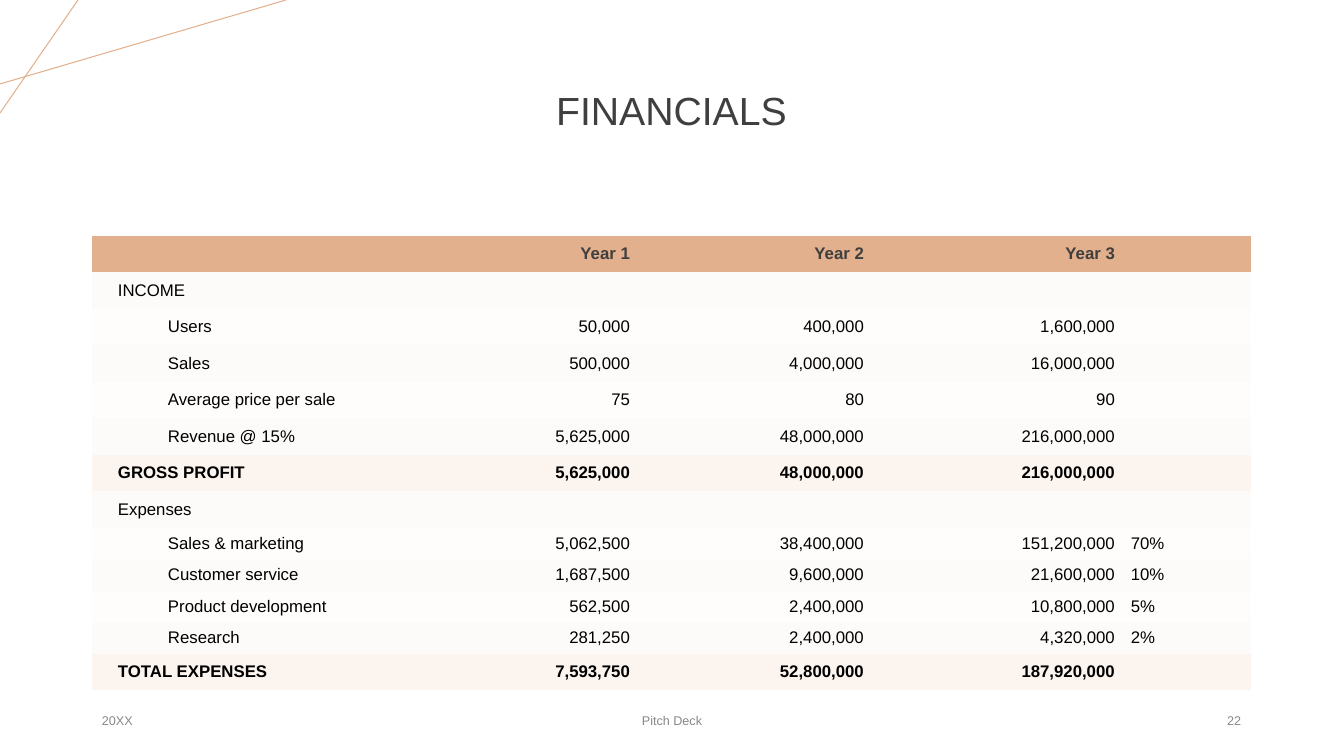
from lxml import etree
from pptx import Presentation
from pptx import util as u
from pptx.dml.color import RGBColor
from pptx.enum import shapes, text
from pptx.oxml import ns

PX = 914400 / 100.8
FONT = "Arial"
COPPER = RGBColor(0xE2, 0xB0, 0x8C)
CHARCOAL = RGBColor(0x3F, 0x3F, 0x3F)
GREY = RGBColor(0x88, 0x88, 0x88)
BLACK = RGBColor(0, 0, 0)
BAND_DARK = RGBColor(0xFD, 0xFB, 0xF9)
BAND_LIGHT = RGBColor(0xFE, 0xFD, 0xFC)
TOTAL_FILL = RGBColor(0xFB, 0xF4, 0xEF)
NO_GRID_STYLE = "{2D5ABB26-0587-4C30-8999-92F81FD0307C}"
LEFT, CENTER, RIGHT = text.PP_ALIGN.LEFT, text.PP_ALIGN.CENTER, text.PP_ALIGN.RIGHT

COLUMN_WIDTHS = [357, 189, 234, 251, 128]
# Row kind, then the cells
ROWS = [
    ("header", ["", "Year 1", "Year 2", "Year 3", ""]),
    ("section", ["INCOME", "", "", "", ""]),
    ("item", ["Users", "50,000", "400,000", "1,600,000", ""]),
    ("item", ["Sales", "500,000", "4,000,000", "16,000,000", ""]),
    ("item", ["Average price per sale", "75", "80", "90", ""]),
    ("item", ["Revenue @ 15%", "5,625,000", "48,000,000", "216,000,000", ""]),
    ("total", ["GROSS PROFIT", "5,625,000", "48,000,000", "216,000,000", ""]),
    ("section", ["Expenses", "", "", "", ""]),
    ("item", ["Sales & marketing", "5,062,500", "38,400,000", "151,200,000", "70%"]),
    ("item", ["Customer service", "1,687,500", "9,600,000", "21,600,000", "10%"]),
    ("item", ["Product development", "562,500", "2,400,000", "10,800,000", "5%"]),
    ("item", ["Research", "281,250", "2,400,000", "4,320,000", "2%"]),
    ("total", ["TOTAL EXPENSES", "7,593,750", "52,800,000", "187,920,000", ""]),
]


def px(length):
    return u.Emu(round(length * PX))


def write(paragraph, words, size=12, color=BLACK, bold=False, align=LEFT,
          indent=0, spacing=None):
    paragraph.alignment = align
    if spacing:
        paragraph.line_spacing = spacing
    if indent:
        paragraph.level = 1
        properties = paragraph._p.get_or_add_pPr()
        properties.set("marL", str(px(indent)))
        properties.set("indent", "0")
    if not words:
        # An empty cell keeps the text size, so that its row does not grow
        end = etree.SubElement(paragraph._p, ns.qn("a:endParaRPr"))
        end.set("sz", str(size * 100))
        return
    run = paragraph.add_run()
    run.text = words
    run.font.name = FONT
    run.font.size = u.Pt(size)
    run.font.bold = bold
    run.font.color.rgb = color


class FinancialSlide:
    def __init__(self, presentation):
        self.slide = presentation.slides.add_slide(presentation.slide_layouts[5])

    def line(self, x1, y1, x2, y2):
        connector = self.slide.shapes.add_connector(
            shapes.MSO_CONNECTOR.STRAIGHT, px(x1), px(y1), px(x2), px(y2))
        connector.line.color.rgb = COPPER
        connector.line.width = u.Pt(0.75)
        etree.SubElement(connector._element.spPr, ns.qn("a:effectLst"))

    def title(self, words, x, y, width, height):
        title = self.slide.shapes.title
        title.left, title.top = px(x), px(y)
        title.width, title.height = px(width), px(height)
        title.text_frame.vertical_anchor = text.MSO_ANCHOR.MIDDLE
        write(title.text_frame.paragraphs[0], words, size=28, color=CHARCOAL,
              align=CENTER, spacing=0.9)

    def footer(self, words, x, width, align):
        box = self.slide.shapes.add_textbox(px(x), px(701), px(width), px(40))
        box.text_frame.word_wrap = True
        box.text_frame.vertical_anchor = text.MSO_ANCHOR.MIDDLE
        write(box.text_frame.paragraphs[0], words, size=9, color=GREY, align=align)

    def table(self, x, y):
        # Rows with every cell filled are lower; odd rows take one px more
        heights = [(31 if all(cells) else 36) + index % 2
                   for index, (kind, cells) in enumerate(ROWS)]
        frame = self.slide.shapes.add_table(
            len(ROWS), len(COLUMN_WIDTHS), px(x), px(y),
            px(sum(COLUMN_WIDTHS)), px(sum(heights)))
        table = frame.table
        table.horz_banding = False
        table._tbl.tblPr.find(ns.qn("a:tableStyleId")).text = NO_GRID_STYLE
        for column, width in zip(table.columns, COLUMN_WIDTHS):
            column.width = px(width)
        for index, (kind, cells) in enumerate(ROWS):
            table.rows[index].height = px(heights[index])
            band = BAND_DARK if index % 2 else BAND_LIGHT
            fill = {"header": COPPER, "total": TOTAL_FILL}.get(kind, band)
            for column, words in enumerate(cells):
                self.cell(table.cell(index, column), words, kind, column, fill)

    def cell(self, cell, words, kind, column, fill):
        cell.fill.solid()
        cell.fill.fore_color.rgb = fill
        cell.vertical_anchor = text.MSO_ANCHOR.MIDDLE
        cell.margin_left = px(8 if column else 26)
        cell.margin_right = px(8)
        cell.margin_top = cell.margin_bottom = px(4)
        write(cell.text_frame.paragraphs[0], words,
              color=CHARCOAL if kind == "header" else BLACK,
              bold=kind in ("header", "total"),
              align=RIGHT if column in (1, 2, 3) else LEFT,
              indent=50 if kind == "item" and column == 0 else 0)


def main():
    presentation = Presentation()
    presentation.slide_width, presentation.slide_height = px(1344), px(756)
    page = FinancialSlide(presentation)

    # Corner lines
    page.line(0, 84, 286, 0)
    page.line(78, 0, 0, 113)

    # Title and figures
    page.title("FINANCIALS", 92, 40, 1159, 146)
    page.table(92, 236)

    # Footer
    page.footer("20XX", 92, 302, LEFT)
    page.footer("Pitch Deck", 445, 454, CENTER)
    page.footer("22", 949, 302, RIGHT)

    presentation.save("out.pptx")


if __name__ == "__main__":
    main()
